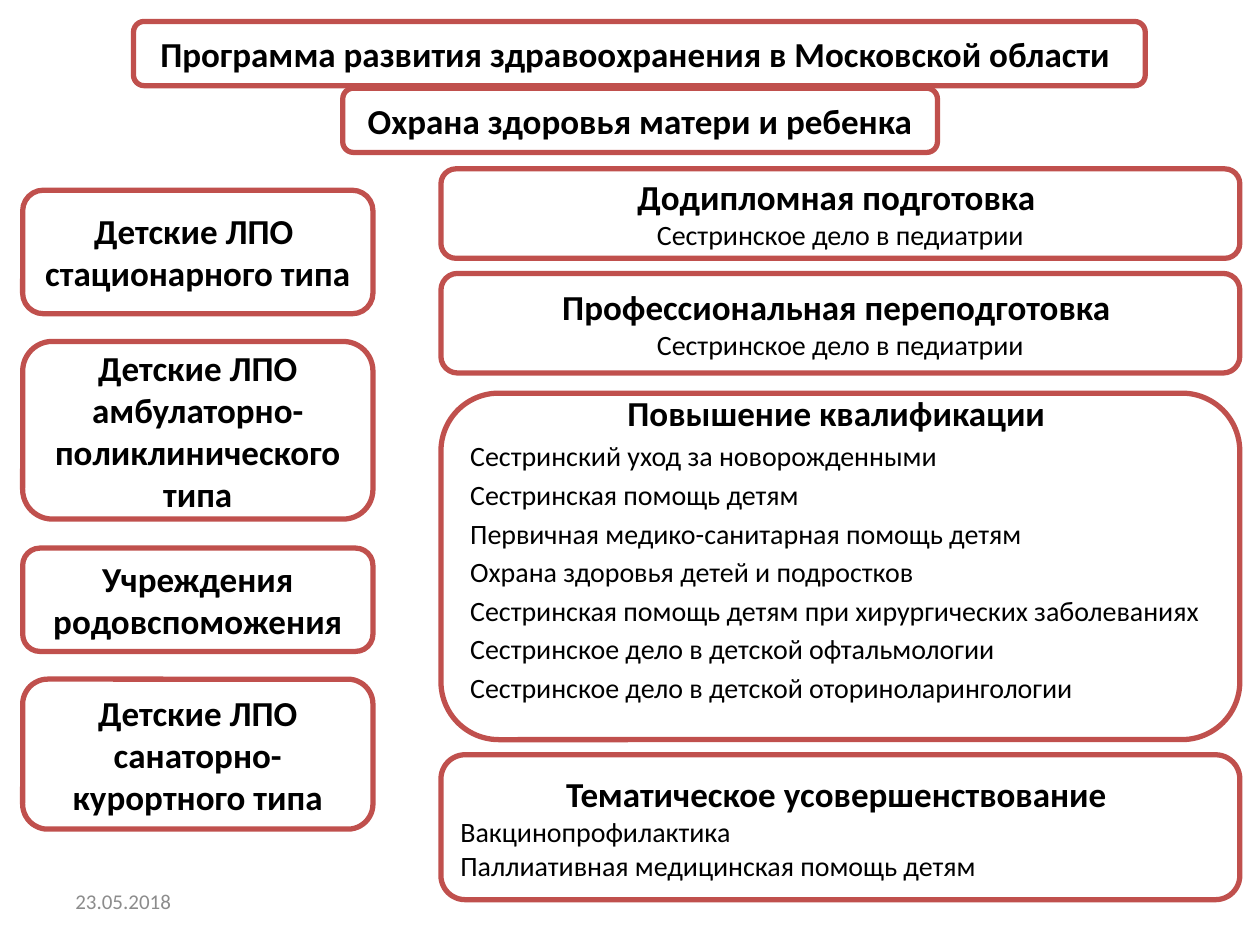
from pptx import Presentation
from pptx.dml.color import RGBColor as Rgb
from pptx.enum.shapes import MSO_SHAPE as Shape
from pptx.enum.text import MSO_ANCHOR as Anchor, PP_ALIGN as Align
from pptx.util import Inches, Pt

HUES = {"fill": "FFFFFF", "edge": "C0504D", "ink": "000000", "date": "8C8C8C"}
LEFT, LEFT_W = 0.18, 2.78
RIGHT, RIGHT_W = 3.5, 6.34

HEADS = [
    (1.06, 0.17, 8.03, "Программа развития здравоохранения в Московской области "),
    (2.72, 0.7, 4.72, "Охрана здоровья матери и ребенка"),
]
CLINICS = [
    (1.51, 0.98, ["Детские ЛПО ", "стационарного типа"]),
    (2.71, 1.41, ["Детские ЛПО амбулаторно-поликлинического типа"]),
    (4.35, 0.82, ["Учреждения родовспоможения"]),
    (5.39, 1.19, ["Детские ЛПО санаторно-курортного типа"]),
]
CARE = ["Сестринское дело в педиатрии"]
COURSES = [
    "Сестринский уход за новорожденными",
    "Сестринская помощь детям",
    "Первичная медико-санитарная помощь детям",
    "Охрана здоровья детей и подростков",
    "Сестринская помощь детям при хирургических заболеваниях",
    "Сестринское дело в детской офтальмологии",
    "Сестринское дело в детской оториноларингологии",
]
TOPICS = ["Вакцинопрофилактика", "Паллиативная медицинская помощь детям"]
STAGES = [
    (1.34, 0.71, "Додипломная подготовка ", CARE, {"align": Align.CENTER}),
    (2.17, 0.79, "Профессиональная переподготовка ", CARE, {"align": Align.CENTER}),
    (3.12, 2.75, "Повышение квалификации ", COURSES, {"space": 1.15, "base": 0.39}),
    (5.99, 1.15, "Тематическое усовершенствование ", TOPICS, {}),
]


def write(para, text, size=20, bold=True, hue="ink", align=Align.CENTER, space=None):
    run = para.add_run()
    run.text = text
    run.font.name = "Calibri"
    run.font.size = Pt(size)
    run.font.bold = bold
    run.font.color.rgb = Rgb.from_string(HUES[hue])
    para.alignment = align
    if space:
        para.line_spacing = space


class Board:
    """Draws outlined boxes and plain text on one slide."""

    def __init__(self, slide):
        self.shapes = slide.shapes

    def frame(self, shape, base=0.05):
        frame = shape.text_frame
        frame.word_wrap = True
        frame.vertical_anchor = Anchor.MIDDLE
        frame.margin_bottom = Inches(base)
        return frame

    def box(self, x, y, w, h, heads, items=(), align=Align.LEFT, space=None, base=0.05):
        area = [Inches(v) for v in (x, y, w, h)]
        shape = self.shapes.add_shape(Shape.ROUNDED_RECTANGLE, *area)
        shape.shadow.inherit = False
        shape.fill.solid()
        shape.fill.fore_color.rgb = Rgb.from_string(HUES["fill"])
        shape.line.color.rgb = Rgb.from_string(HUES["edge"])
        shape.line.width = Pt(3)
        frame = self.frame(shape, base)
        lines = [(text, {}) for text in heads]
        lines += [(text, {"size": 16, "bold": False, "align": align}) for text in items]
        for i, (text, style) in enumerate(lines):
            para = frame.add_paragraph() if i else frame.paragraphs[0]
            write(para, text, space=space, **style)

    def label(self, x, y, w, h, text, **style):
        shape = self.shapes.add_textbox(*[Inches(v) for v in (x, y, w, h)])
        write(self.frame(shape).paragraphs[0], text, **style)


def main():
    deck = Presentation()
    deck.slide_width, deck.slide_height = Inches(10), Inches(7.5)
    board = Board(deck.slides.add_slide(deck.slide_layouts[6]))
    board.label(0.5, 6.95, 2.33, 0.4, "23.05.2018",
                size=12, bold=False, hue="date", align=Align.LEFT)
    for x, y, w, text in HEADS:
        board.box(x, y, w, 0.51, [text])
    for y, h, heads in CLINICS:
        board.box(LEFT, y, LEFT_W, h, heads)
    for y, h, head, items, style in STAGES:
        board.box(RIGHT, y, RIGHT_W, h, [head], items, **style)
    deck.save("out.pptx")


if __name__ == "__main__":
    main()
